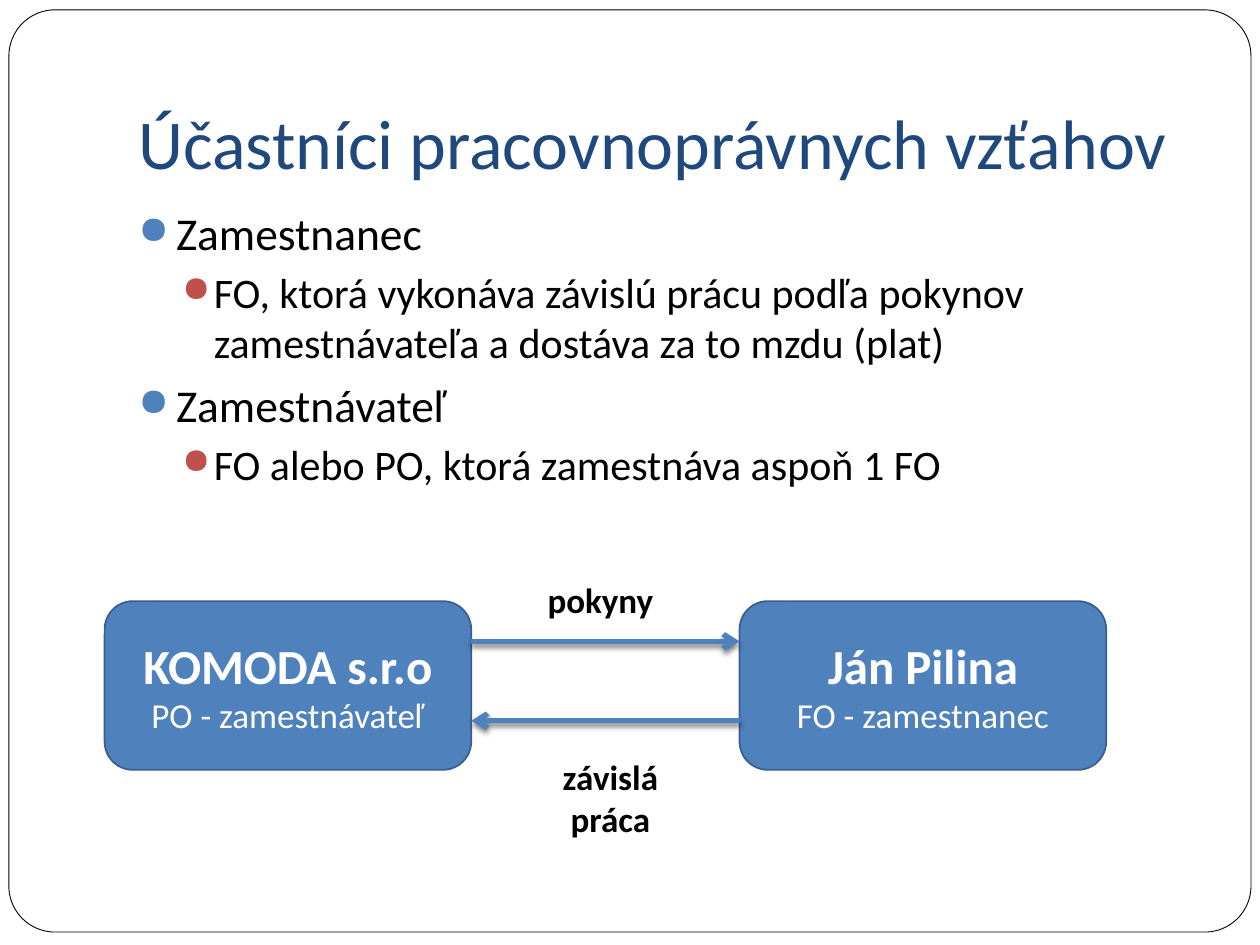
from dataclasses import dataclass

from lxml import etree
from pptx import Presentation
from pptx.dml.color import RGBColor
from pptx.enum.shapes import MSO_CONNECTOR, MSO_SHAPE
from pptx.enum.text import MSO_ANCHOR, PP_ALIGN
from pptx.oxml import parse_xml
from pptx.oxml.ns import nsdecls, qn
from pptx.util import Cm, Pt

ROUNDED = MSO_SHAPE.ROUNDED_RECTANGLE
STRAIGHT = MSO_CONNECTOR.STRAIGHT
TOP, MIDDLE, BOTTOM = MSO_ANCHOR.TOP, MSO_ANCHOR.MIDDLE, MSO_ANCHOR.BOTTOM
LEFT, CENTER = PP_ALIGN.LEFT, PP_ALIGN.CENTER


@dataclass(frozen=True)
class Theme:
    font: str = "Calibri"
    title: str = "1F497D"
    text: str = "000000"
    light: str = "FFFFFF"
    accent: str = "4F81BD"
    outline: str = "3A5F8C"
    bullets: tuple = ("4F81BD", "C0504D")
    bullet_sizes: tuple = (26, 24)
    title_size: int = 40
    name_size: int = 28
    label_size: int = 20


THEME = Theme()

TITLE = "Účastníci pracovnoprávnych vzťahov"
BULLETS = [
    (0, "Zamestnanec"),
    (1, "FO, ktorá vykonáva závislú prácu podľa pokynov zamestnávateľa a dostáva za to mzdu (plat)"),
    (0, "Zamestnávateľ"),
    (1, "FO alebo PO, ktorá zamestnáva aspoň 1 FO"),
]
PARTIES = [("KOMODA s.r.o", "PO - zamestnávateľ"), ("Ján Pilina", "FO - zamestnanec")]
LABELS = [("pokyny", 10.11, 11.53, 1.12), ("závislá práca", 10.31, 15.11, 1.96)]

FRAME = (0.18, 0.2, 25.04, 18.59)
TITLE_BOX = (2.54, 0.76, 21.59, 3.18)
BODY_BOX = (2.54, 4.01, 21.59, 6.71)
PARTY_LEFT, PARTY_TOP, PARTY_WIDTH, PARTY_HEIGHT = 2.11, 12.12, 7.39, 3.4
PARTY_GAP = 5.41
ARROW_TOPS = (12.93, 14.53)
LABEL_WIDTH = 3.99
BULLET_INDENTS = ((0.76, -0.76), (1.52, -0.64))
BULLET_SPACING = (5.8, 3.7)


def add_paragraph(frame, text, size, color, bold=False, align=LEFT):
    paragraph = frame.paragraphs[0]
    if paragraph.runs:
        paragraph = frame.add_paragraph()
    paragraph.text = text
    paragraph.alignment = align
    font = paragraph.font
    font.name, font.size, font.bold = THEME.font, Pt(size), bold
    font.color.rgb = RGBColor.from_string(color)
    return paragraph


def add_text_frame(slide, box, anchor=TOP):
    frame = slide.shapes.add_textbox(*map(Cm, box)).text_frame
    frame.word_wrap = True
    frame.vertical_anchor = anchor
    return frame


def add_rounded_box(slide, box, fill, outline, width):
    shape = slide.shapes.add_shape(ROUNDED, *map(Cm, box))
    shape.shadow.inherit = False
    shape.fill.solid()
    shape.fill.fore_color.rgb = RGBColor.from_string(fill)
    shape.line.color.rgb = RGBColor.from_string(outline)
    shape.line.width = Pt(width)
    return shape


def add_bullet(paragraph, level):
    paragraph.level = level
    paragraph.space_before = Pt(BULLET_SPACING[level])
    properties = paragraph._p.get_or_add_pPr()
    margin, indent = BULLET_INDENTS[level]
    properties.set("marL", str(Cm(margin)))
    properties.set("indent", str(Cm(indent)))
    color = etree.Element(qn("a:buClr"))
    etree.SubElement(color, qn("a:srgbClr"), val=THEME.bullets[level])
    size = etree.Element(qn("a:buSzPct"), val="85000")
    character = etree.Element(qn("a:buChar"), char="●")
    position = list(properties).index(properties.find(qn("a:spcBef"))) + 1
    properties[position:position] = [color, size, character]


def add_arrow(slide, start, end, top):
    arrow = slide.shapes.add_connector(STRAIGHT, Cm(start), Cm(top), Cm(end), Cm(top))
    arrow.line.color.rgb = RGBColor.from_string(THEME.accent)
    arrow.line.width = Pt(3)
    properties = arrow._element.spPr
    etree.SubElement(properties.find(qn("a:ln")), qn("a:tailEnd"), type="arrow")
    properties.append(parse_xml(
        f'<a:effectLst {nsdecls("a")}><a:outerShdw blurRad="{Pt(3)}" dist="{Pt(2)}" '
        f'dir="5400000" rotWithShape="0"><a:srgbClr val="{THEME.text}">'
        '<a:alpha val="50000"/></a:srgbClr></a:outerShdw></a:effectLst>'
    ))


def main():
    """Build the slide on the parties to an employment relationship."""
    presentation = Presentation()
    presentation.slide_width, presentation.slide_height = Cm(25.4), Cm(19.05)
    slide = presentation.slides.add_slide(presentation.slide_layouts[6])

    border = add_rounded_box(slide, FRAME, THEME.light, THEME.text, 0.5)
    border.adjustments[0] = 0.05

    title = add_text_frame(slide, TITLE_BOX, BOTTOM)
    title.margin_bottom = Cm(0.25)
    add_paragraph(title, TITLE, THEME.title_size, THEME.title)

    body = add_text_frame(slide, BODY_BOX)
    for level, text in BULLETS:
        add_bullet(add_paragraph(body, text, THEME.bullet_sizes[level], THEME.text), level)

    for index, (name, role) in enumerate(PARTIES):
        left = PARTY_LEFT + index * (PARTY_WIDTH + PARTY_GAP)
        box = (left, PARTY_TOP, PARTY_WIDTH, PARTY_HEIGHT)
        party = add_rounded_box(slide, box, THEME.accent, THEME.outline, 1)
        party.text_frame.vertical_anchor = MIDDLE
        add_paragraph(party.text_frame, name, THEME.name_size, THEME.light, True, CENTER)
        add_paragraph(party.text_frame, role, THEME.label_size, THEME.light, False, CENTER)

    employer_edge = PARTY_LEFT + PARTY_WIDTH
    employee_edge = employer_edge + PARTY_GAP
    add_arrow(slide, employer_edge, employee_edge, ARROW_TOPS[0])
    add_arrow(slide, employee_edge, employer_edge, ARROW_TOPS[1])

    for text, left, top, height in LABELS:
        label = add_text_frame(slide, (left, top, LABEL_WIDTH, height))
        add_paragraph(label, text, THEME.label_size, THEME.text, True, CENTER)

    presentation.save("out.pptx")


if __name__ == "__main__":
    main()
